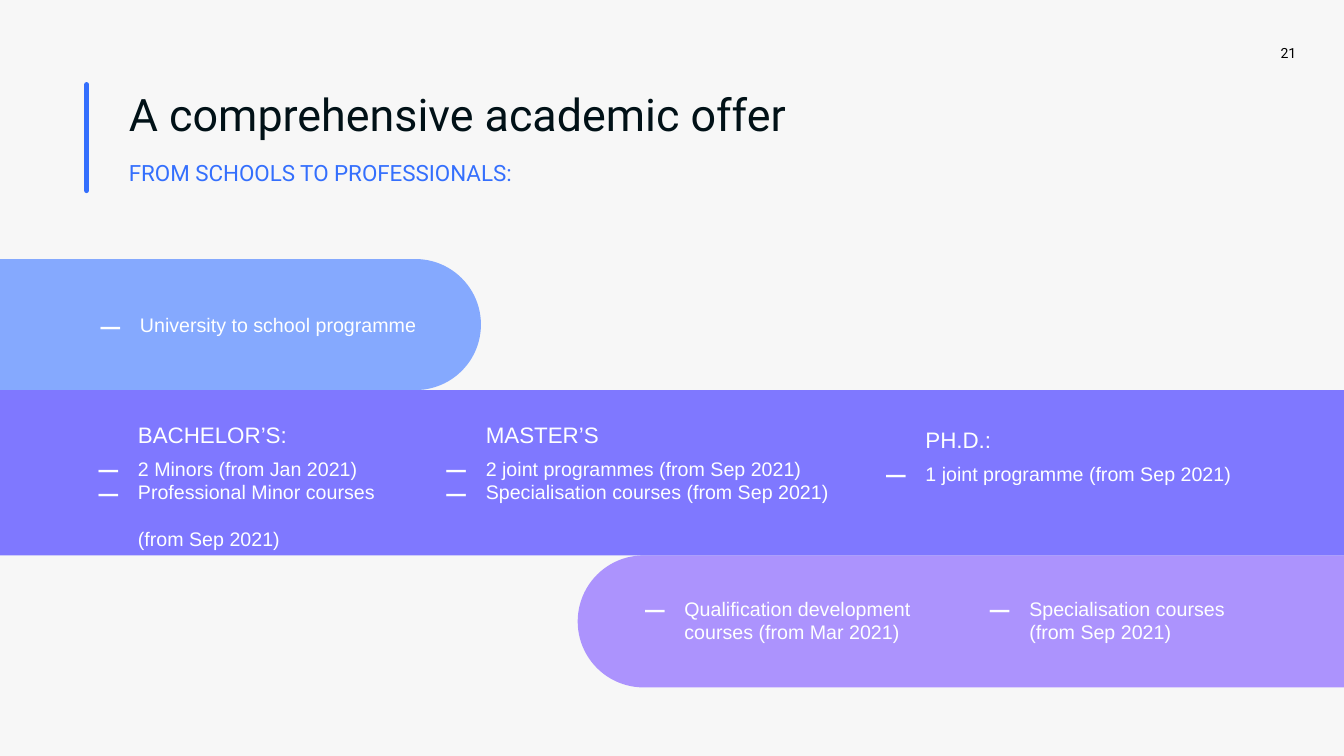
"""Build the academic offer slide: three programme bands under a title."""
import pptx
import pptx.dml.color
import pptx.enum.shapes
import pptx.enum.text
import pptx.oxml
import pptx.oxml.ns
import pptx.util
import lxml.etree

Inches = pptx.util.Inches
Pt = pptx.util.Pt
WHITE, BLUE = "FEFFFF", "346FFD"
INDENT = Inches(0.39)


def color(hex_code):
    return pptx.dml.color.RGBColor.from_string(hex_code)


def write(para, text, size, font, hex_code):
    para.text = text
    for span in para.runs:
        span.font.size = Pt(size)
        span.font.name = font
        span.font.color.rgb = color(hex_code)
    for line_break in para._p.findall(pptx.oxml.ns.qn("a:br")):
        properties = lxml.etree.SubElement(line_break, pptx.oxml.ns.qn("a:rPr"))
        properties.set("sz", str(size * 100))


deck = pptx.Presentation()
deck.slide_width, deck.slide_height = Inches(13.33), Inches(7.5)
page = deck.slides.add_slide(deck.slide_layouts[6])
page.background.fill.solid()
page.background.fill.fore_color.rgb = color("F7F7F7")

bands = [
    (-1.05, 2.57, 5.82, 1.3, 0.5, "85A9FE"),
    (5.73, 5.51, 8.77, 1.31, 0.5, "AC93FD"),
    (0, 3.87, 13.33, 1.64, 0, "7F78FF"),
]
for left, top, width, height, rounding, fill in bands:
    band = page.shapes.add_shape(
        pptx.enum.shapes.MSO_SHAPE.ROUNDED_RECTANGLE,
        Inches(left), Inches(top), Inches(width), Inches(height))
    band.adjustments[0] = rounding
    band.shadow.inherit = False
    band.fill.solid()
    band.fill.fore_color.rgb = color(fill)
    band.line.fill.background()

offers = [
    (0.9, 3.06, 3.67, 0.34, None, ["University to school programme"]),
    (0.88, 4.13, 2.97, 1.16, "BACHELOR’S:",
     ["2 Minors (from Jan 2021)", "Professional Minor courses \n(from Sep 2021)"]),
    (4.33, 4.13, 4.06, 0.93, "MASTER’S",
     ["2 joint programmes (from Sep 2021)", "Specialisation courses (from Sep 2021)"]),
    (8.69, 4.18, 3.76, 0.69, "PH.D.:", ["1 joint programme (from Sep 2021)"]),
    (6.3, 5.87, 2.9, 0.57, None, ["Qualification development courses (from Mar 2021)"]),
    (9.72, 5.87, 2.55, 0.57, None, ["Specialisation courses\n(from Sep 2021)"]),
]
bullet_parts = [
    f'<a:buClr {pptx.oxml.ns.nsdecls("a")}><a:srgbClr val="{WHITE}"/></a:buClr>',
    f'<a:buSzPct {pptx.oxml.ns.nsdecls("a")} val="180000"/>',
    f'<a:buFont {pptx.oxml.ns.nsdecls("a")} typeface="Arial"/>',
    f'<a:buChar {pptx.oxml.ns.nsdecls("a")} char="–"/>',
]
for left, top, width, height, heading, courses in offers:
    box = page.shapes.add_textbox(Inches(left), Inches(top), Inches(width), Inches(height))
    frame = box.text_frame
    frame.word_wrap = True
    para = frame.paragraphs[0]
    if heading:
        write(para, heading, 16, "Arial", WHITE)
        para.space_after = Pt(6)
        para._p.get_or_add_pPr().set("indent", str(INDENT))
    for number, course in enumerate(courses):
        if heading or number:
            para = frame.add_paragraph()
        write(para, course, 14, "Arial", WHITE)
        properties = para._p.get_or_add_pPr()
        properties.set("marL", str(INDENT))
        properties.set("indent", str(-INDENT))
        for part in bullet_parts:
            properties.append(pptx.oxml.parse_xml(part))

accent = page.shapes.add_connector(
    pptx.enum.shapes.MSO_CONNECTOR.STRAIGHT,
    Inches(0.86), Inches(0.84), Inches(0.86), Inches(1.89))
accent.line.color.rgb = color(BLUE)
accent.line.width = Pt(3.75)
accent.line._get_or_add_ln().set("cap", "rnd")
lxml.etree.SubElement(accent._element.spPr, pptx.oxml.ns.qn("a:effectLst"))

title = page.shapes.add_textbox(Inches(1.18), Inches(0.84), Inches(10.57), Inches(0.64))
title.text_frame.word_wrap = True
title.text_frame.vertical_anchor = pptx.enum.text.MSO_ANCHOR.MIDDLE
para = title.text_frame.paragraphs[0]
write(para, "A comprehensive academic offer", 32, "Roboto", "011117")
para.line_spacing = 0.9

subtitle = page.shapes.add_textbox(Inches(1.18), Inches(1.48), Inches(8.65), Inches(0.61))
subtitle.text_frame.word_wrap = True
para = subtitle.text_frame.paragraphs[0]
write(para, "FROM SCHOOLS TO PROFESSIONALS:", 16, "Roboto", BLUE)
para.line_spacing = 1.2
para.space_before = Pt(10)

page_number = page.shapes.add_textbox(Inches(12.28), Inches(0.44), Inches(0.61), Inches(0.27))
frame = page_number.text_frame
frame.word_wrap = True
frame.margin_top = frame.margin_right = 0
para = frame.paragraphs[0]
write(para, "21 ", 10, "Roboto", "000000")
para.alignment = pptx.enum.text.PP_ALIGN.RIGHT

deck.save("out.pptx")
